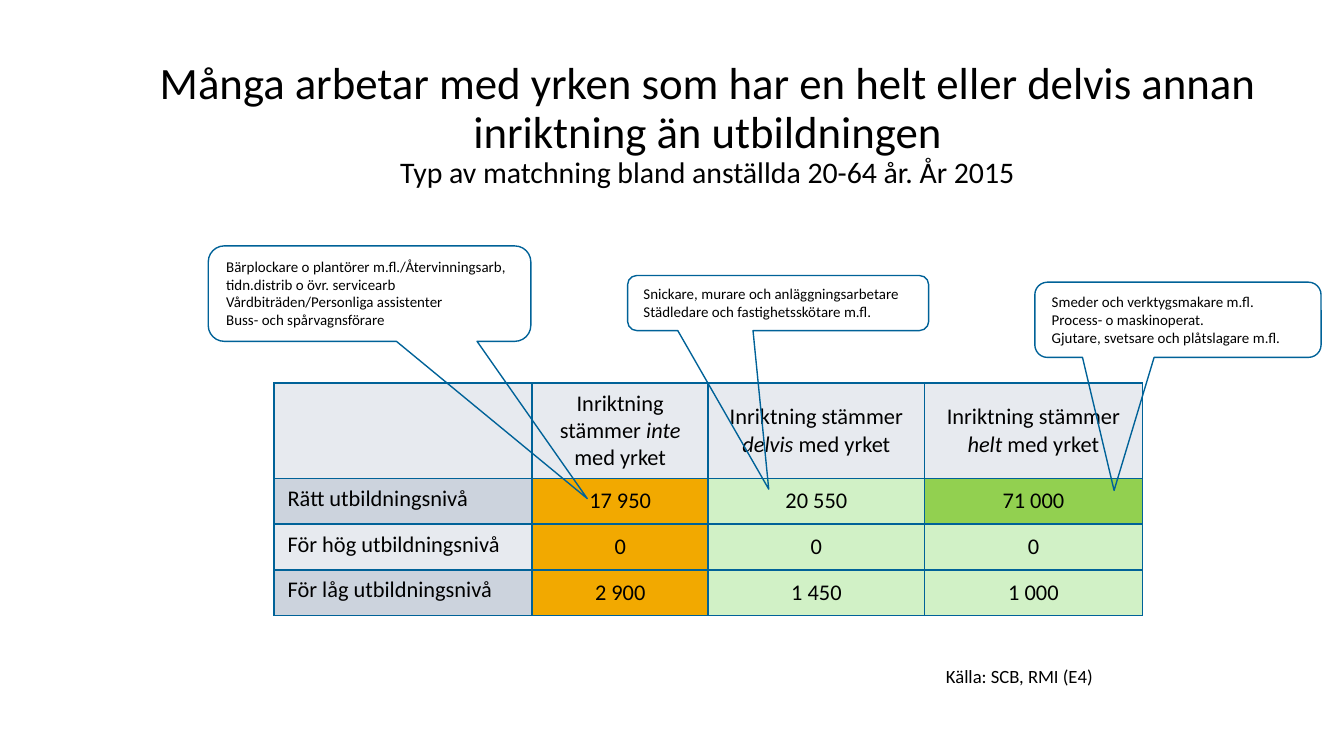
from lxml.etree import SubElement
from pptx import Presentation
from pptx.dml.color import RGBColor
from pptx.enum.shapes import MSO_SHAPE as Shape
from pptx.enum.text import MSO_ANCHOR as Anchor, MSO_AUTO_SIZE as AutoSize, PP_ALIGN as Align
from pptx.oxml.ns import qn
from pptx.util import Inches, Pt

FONT = "Calibri"
BLACK = RGBColor(0x00, 0x00, 0x00)
BLUE = RGBColor(0x00, 0x62, 0x98)
PALE_GREY = RGBColor(0xE7, 0xEA, 0xEF)
GREY = RGBColor(0xCC, 0xD3, 0xDD)
ORANGE = RGBColor(0xF2, 0xA9, 0x00)
PALE_GREEN = RGBColor(0xD1, 0xF1, 0xC6)
GREEN = RGBColor(0x92, 0xD0, 0x50)

COLUMN_WIDTHS = [1.92, 1.31, 1.61, 1.62]
ROW_HEIGHTS = [0.71, 0.34, 0.34, 0.34]
MATCH_DEGREES = ["inte", "delvis", "helt"]
LEVELS = [
    ("Rätt utbildningsnivå", GREY, ["17 950", "20 550", "71 000"], [ORANGE, PALE_GREEN, GREEN]),
    ("För hög utbildningsnivå", PALE_GREY, ["0", "0", "0"], [ORANGE, PALE_GREEN, PALE_GREEN]),
    ("För låg utbildningsnivå", GREY, ["2 900", "1 450", "1 000"], [ORANGE, PALE_GREEN, PALE_GREEN]),
]

# Left, top, width, height, pointer tip, lines of text
OCCUPATIONS = [
    (1.55, 1.83, 2.4, 0.71, (4.37, 3.71), [
        "Bärplockare o plantörer m.fl./Återvinningsarb, tidn.distrib o övr. servicearb",
        "Vårdbiträden/Personliga assistenter",
        "Buss- och spårvagnsförare"]),
    (7.7, 2.1, 2.13, 0.56, (8.29, 3.65), [
        "Smeder och verktygsmakare m.fl.",
        "Process- o maskinoperat.",
        "Gjutare, svetsare och plåtslagare m.fl."]),
    (4.67, 2.05, 2.24, 0.41, (5.72, 3.64), [
        "Snickare, murare och anläggningsarbetare",
        "Städledare och fastighetsskötare m.fl."]),
]


def add_run(paragraph, text, size, italic=False):
    run = paragraph.add_run()
    run.text = text
    font = run.font
    font.name, font.size, font.italic = FONT, Pt(size), italic
    font.color.rgb = BLACK


def write_text(frame, lines, size, align=Align.LEFT, anchor=Anchor.TOP, wrap=True):
    """Write one paragraph per line; words between asterisks become italic."""
    frame.word_wrap = wrap
    frame.vertical_anchor = anchor
    for index, line in enumerate(lines):
        paragraph = frame.add_paragraph() if index else frame.paragraphs[0]
        paragraph.alignment = align
        for part, text in enumerate(line.split("*")):
            add_run(paragraph, text, size, italic=part % 2 == 1)


def add_title(slide, heading, subtitle):
    box = slide.shapes.add_textbox(Inches(0.85), Inches(0.37), Inches(8.83), Inches(1.13))
    frame = box.text_frame
    frame.margin_left = frame.margin_right = frame.margin_top = frame.margin_bottom = 0
    write_text(frame, [heading], 24, Align.CENTER, Anchor.MIDDLE)
    paragraph = frame.paragraphs[0]
    paragraph.line_spacing = 0.9
    paragraph.add_line_break()
    add_run(paragraph, subtitle, 16)


def add_borders(cell):
    properties = cell._tc.get_or_add_tcPr()
    for index, side in enumerate(("lnL", "lnR", "lnT", "lnB")):
        line = properties.makeelement(qn(f"a:{side}"), {"w": str(Pt(1))})
        fill = SubElement(line, qn("a:solidFill"))
        SubElement(fill, qn("a:srgbClr"), val=str(BLUE))
        SubElement(line, qn("a:prstDash"), val="solid")
        properties.insert(index, line)


def fill_cell(cell, text, color, align=Align.CENTER, anchor=Anchor.MIDDLE):
    cell.fill.solid()
    cell.fill.fore_color.rgb = color
    add_borders(cell)
    if text:
        write_text(cell.text_frame, [text], 12, align)
        cell.vertical_anchor = anchor


def add_matching_table(slide):
    table = slide.shapes.add_table(
        len(ROW_HEIGHTS), len(COLUMN_WIDTHS), Inches(2.04), Inches(2.85),
        Inches(sum(COLUMN_WIDTHS)), Inches(sum(ROW_HEIGHTS))).table
    for column, width in zip(table.columns, COLUMN_WIDTHS):
        column.width = Inches(width)
    for row, height in zip(table.rows, ROW_HEIGHTS):
        row.height = Inches(height)

    fill_cell(table.cell(0, 0), "", PALE_GREY)
    for column, degree in enumerate(MATCH_DEGREES, 1):
        fill_cell(table.cell(0, column), f"Inriktning stämmer *{degree}* med yrket", PALE_GREY)
    for row, (level, level_color, counts, colors) in enumerate(LEVELS, 1):
        fill_cell(table.cell(row, 0), level, level_color, Align.LEFT, Anchor.TOP)
        for column, (count, color) in enumerate(zip(counts, colors), 1):
            fill_cell(table.cell(row, column), count, color)


def add_callout(slide, left, top, width, height, tip, lines):
    callout = slide.shapes.add_shape(
        Shape.ROUNDED_RECTANGULAR_CALLOUT,
        Inches(left), Inches(top), Inches(width), Inches(height))
    callout.adjustments[0] = (tip[0] - left) / width - 0.5
    callout.adjustments[1] = (tip[1] - top) / height - 0.5
    callout.shadow.inherit = False
    callout.fill.background()
    callout.line.color.rgb = BLUE
    callout.line.width = Pt(0.75)
    write_text(callout.text_frame, lines, 8)
    callout.text_frame.auto_size = AutoSize.SHAPE_TO_FIT_TEXT


def add_source(slide, text):
    box = slide.shapes.add_textbox(Inches(6.94), Inches(4.9), Inches(1.31), Inches(0.27))
    write_text(box.text_frame, [text], 10, wrap=False)
    box.text_frame.auto_size = AutoSize.SHAPE_TO_FIT_TEXT


def main():
    presentation = Presentation()
    presentation.slide_width = Inches(10)
    presentation.slide_height = Inches(10 * 9 / 16)
    slide = presentation.slides.add_slide(presentation.slide_layouts[6])
    add_title(
        slide,
        "Många arbetar med yrken som har en helt eller delvis annan inriktning än utbildningen",
        "Typ av matchning bland anställda 20-64 år. År 2015")
    add_matching_table(slide)
    add_source(slide, "Källa: SCB, RMI (E4)")
    for occupation in OCCUPATIONS:
        add_callout(slide, *occupation)
    presentation.save("out.pptx")


if __name__ == "__main__":
    main()
